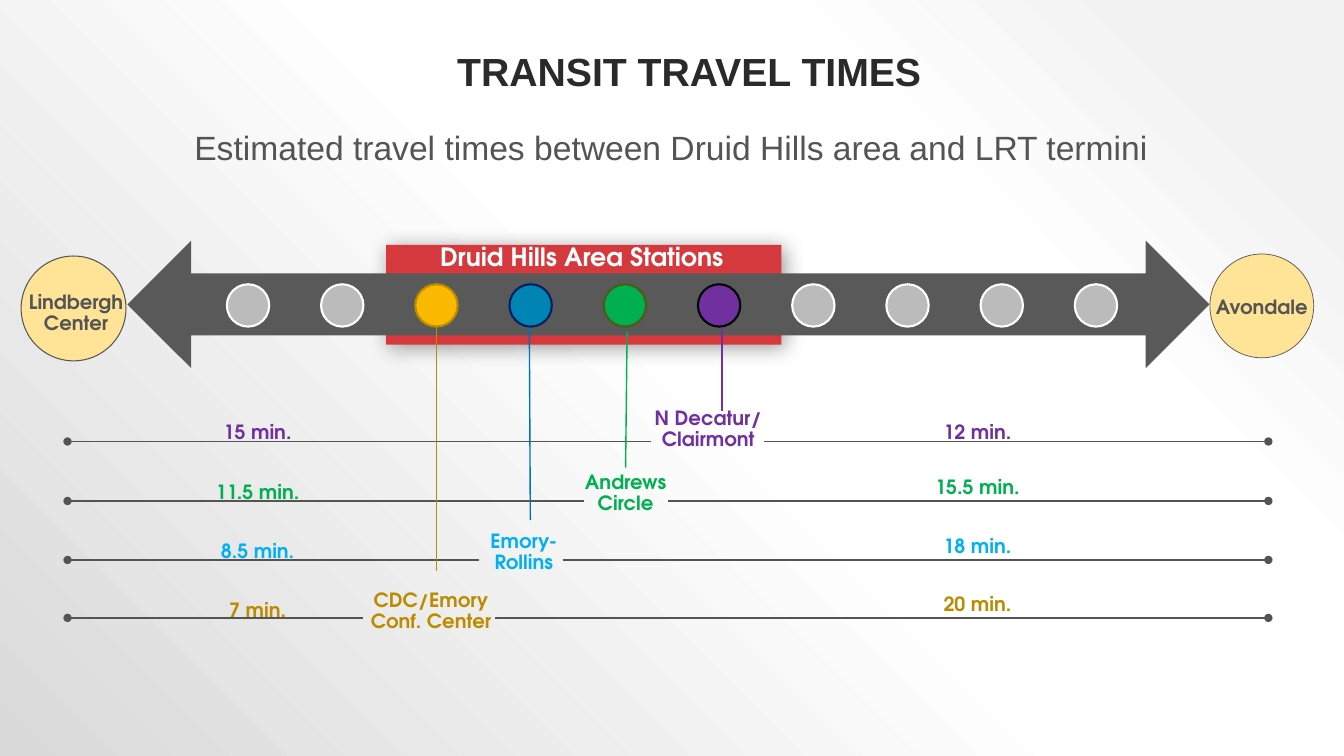
import dataclasses

import pptx
import pptx.dml.color
import pptx.enum.dml
import pptx.enum.shapes
import pptx.enum.text
import pptx.oxml.ns
import pptx.util
from lxml import etree

qn = pptx.oxml.ns.qn
SHAPE = pptx.enum.shapes.MSO_SHAPE
COLUMNS, ROWS = 133.3, 75
CELL = pptx.util.Inches(0.1)


@dataclasses.dataclass(frozen=True)
class Theme:
    heading: str = "Arial"
    label: str = "TeX Gyre Adventor"
    title_size: int = 28
    subtitle_size: int = 24
    banner_size: int = 18
    label_size: int = 14
    title: str = "2A2A2A"
    grey: str = "545454"
    arrow: str = "595959"
    banner: str = "D5393D"
    terminus: str = "FFE497"
    stop: str = "BBBBBB"
    white: str = "FFFFFF"
    black: str = "000000"
    gold: str = "FAB900"
    dark_gold: str = "BB8B00"
    blue: str = "0084B4"
    navy: str = "002060"
    mid_blue: str = "0070C0"
    sky: str = "00B0F0"
    green: str = "00B050"
    olive: str = "485E12"
    purple: str = "7030A0"
    backdrop: tuple = ((10, "F2F2F2"), (28, "FFFFFF"), (48, "FFFFFF"), (100, "D9D9D9"))


THEME = Theme()


@dataclasses.dataclass(frozen=True)
class Box:
    column: float
    row: float
    width: float
    height: float

    def inset(self, column, row, width, height):
        return Box(self.column + column, self.row + row, width, height)

    def point(self, column, row):
        return self.inset(column, row, 0, 0).frame()[:2]

    def frame(self):
        return [round(length * CELL) for length in dataclasses.astuple(self)]


def apply(target, values):
    for name, value in values.items():
        setattr(target, name, value)


def rgb(color):
    return pptx.dml.color.RGBColor.from_string(color)


def add_xml(parent, tag, **attributes):
    values = {name: str(value) for name, value in attributes.items()}
    return etree.SubElement(parent, qn(tag), values)


def write(holder, lines, size, color, font=THEME.label, bold=True, wrap=False):
    frame = holder.text_frame
    apply(frame, {
        "text": "\n".join(lines),
        "word_wrap": wrap,
        "auto_size": pptx.enum.text.MSO_AUTO_SIZE.NONE,
        "vertical_anchor": pptx.enum.text.MSO_ANCHOR.TOP,
    })
    for para in frame.paragraphs:
        apply(para, {"alignment": pptx.enum.text.PP_ALIGN.CENTER, "line_spacing": 0.9})
        for span in para.runs:
            apply(span.font, {"name": font, "size": pptx.util.Pt(size), "bold": bold})
            span.font.color.rgb = rgb(color)


def add_text(page, box, lines, size, color, **options):
    holder = page.shapes.add_textbox(*box.frame())
    write(holder, lines, size, color, **options)
    return holder


def add_figure(page, kind, box, fill, line=None, weight=1):
    figure = page.shapes.add_shape(kind, *box.frame())
    figure.shadow.inherit = False
    figure.fill.solid()
    figure.fill.fore_color.rgb = rgb(fill)
    if line:
        figure.line.color.rgb = rgb(line)
        figure.line.width = pptx.util.Pt(weight)
    else:
        figure.line.fill.background()
    return figure


def add_line(page, start, end, color):
    line = page.shapes.add_connector(
        pptx.enum.shapes.MSO_CONNECTOR.STRAIGHT, *start, *end)
    line.line.color.rgb = rgb(color)
    line.line.width = pptx.util.Pt(1)
    add_xml(line._element.spPr, "a:effectLst")
    return line


def paint_background(page):
    page.background.fill.gradient()
    gradient = page._element.find(".//" + qn("a:gradFill"))
    gradient.clear()
    stops = add_xml(gradient, "a:gsLst")
    for position, color in THEME.backdrop:
        stop = add_xml(stops, "a:gs", pos=position * 1000)
        add_xml(stop, "a:srgbClr", val=color)
    focus = add_xml(gradient, "a:path", path="circle")
    add_xml(focus, "a:fillToRect", l=100000, b=100000)


def place_heading(page, box):
    title = page.shapes.title
    apply(title, dict(zip(("left", "top", "width", "height"),
                          box.inset(15, 0, 106.7, 14.5).frame())))
    write(title, ["TRANSIT TRAVEL TIMES"], THEME.title_size, THEME.title,
          font=THEME.heading, wrap=True)
    add_text(page, box.inset(6.2, 7.8, 120.7, 9.2),
             ["Estimated travel times between Druid Hills area and LRT termini"],
             THEME.subtitle_size, THEME.grey, font=THEME.heading, bold=False, wrap=True)


def place_corridor(page, box):
    banner = add_figure(page, SHAPE.RECTANGLE, box.inset(38.3, 0.5, 39.2, 9.9), THEME.banner)
    effects = banner._element.spPr.find(qn("a:effectLst"))
    shadow = add_xml(effects, "a:outerShdw", blurRad=pptx.util.Pt(15),
                     dist=pptx.util.Pt(3), dir=45 * 60000, algn="tl", rotWithShape=0)
    add_xml(add_xml(shadow, "a:srgbClr", val=THEME.black), "a:alpha", val=40000)

    arrow = add_figure(page, SHAPE.LEFT_RIGHT_ARROW, box.inset(13.3, 1.2, 106, 10.4),
                       THEME.arrow, THEME.arrow, 6.75)
    add_xml(arrow._element.spPr.find(qn("a:ln")), "a:miter", lim=800000)

    termini = (
        ((120, 1.4, 10.3, 10.3), 0.5, (119.5, 5.2, 11.3, 5.1), ["Avondale"]),
        ((2.1, 1.6, 10.4, 10.4), 0.75, (1.8, 4.7, 11.5, 7.2), ["Lindbergh", "Center"]),
    )
    for circle, weight, label, lines in termini:
        add_figure(page, SHAPE.OVAL, box.inset(*circle), THEME.terminus, THEME.grey, weight)
        add_text(page, box.inset(*label), lines, THEME.label_size, THEME.grey)

    plain = (THEME.stop, THEME.white)
    stations = [plain] * 2 + [
        (THEME.gold, THEME.dark_gold), (THEME.blue, THEME.navy),
        (THEME.green, THEME.olive), (THEME.purple, THEME.black),
    ] + [plain] * 4
    pitch = (106.6 - 22.5) / (len(stations) - 1)
    for index, (fill, line) in enumerate(stations):
        add_figure(page, SHAPE.OVAL, box.inset(22.5 + index * pitch, 4.4, 4.2, 4.2),
                   fill, line, 1.5)
    add_text(page, box.inset(42.5, 0, 30.4, 3.7), ["Druid Hills Area Stations"],
             THEME.banner_size, THEME.white)


def place_times(page, box):
    rows = (
        (["N Decatur/", "Clairmont"], THEME.purple, THEME.purple, (63, 0), 3.8,
         (64.6, 75.8), ("15 min.", 1.4), ("12 min.", 1.4), (71.6, -7.5), (71.6, 0.8)),
        (["Andrews", "Circle"], THEME.green, THEME.green, (54.8, 6.4), 9.7,
         (57.9, 66.3), ("11.5 min.", 7.4), ("15.5 min.", 6.9), (62.2, -7.1), None),
        (["Emory-", "Rollins"], THEME.sky, THEME.mid_blue, (44.7, 12.2), 15.55,
         (47.5, 55.8), ("8.5 min.", 13.2), ("18 min.", 12.7), (52.5, -7.5), (52.6, 11.6)),
        (["CDC/Emory", "Conf. Center"], THEME.dark_gold, THEME.dark_gold, (35.5, 18.1), 21.3,
         (36, 49.1), ("7 min.", 19.1), ("20 min.", 18.5), (43.3, -7.6), (43.3, 16.6)),
    )
    for lines, color, drop_color, corner, row, gap, west, east, start, end in rows:
        label = add_text(page, box.inset(*corner, 14.5, 5.3), lines,
                         THEME.label_size, color, wrap=True)
        sides = zip(gap, (6.7, 125.8), (18.3, 89.7), (west, east))
        for inner, outer, column, (time, top) in sides:
            span = add_line(page, box.point(inner, row), box.point(outer, row), THEME.grey)
            add_xml(span._element.spPr.find(qn("a:ln")), "a:tailEnd", type="oval")
            add_text(page, box.inset(column, top, 14.5, 3.1), [time],
                     THEME.label_size, color, wrap=True)
        drop = add_line(page, box.point(*start), box.point(*(end or start)), drop_color)
        if end is None:
            drop.end_connect(label, 0)


def main():
    deck = pptx.Presentation()
    apply(deck, {"slide_width": round(COLUMNS * CELL), "slide_height": ROWS * CELL})
    page = deck.slides.add_slide(deck.slide_layouts.get_by_name("Title Only"))
    paint_background(page)
    place_heading(page, Box(0, 4.7, COLUMNS, 17))
    place_corridor(page, Box(0, 23.8, COLUMNS, 12.7))
    place_times(page, Box(0, 40, COLUMNS, 24))
    deck.save("out.pptx")


if __name__ == "__main__":
    main()
